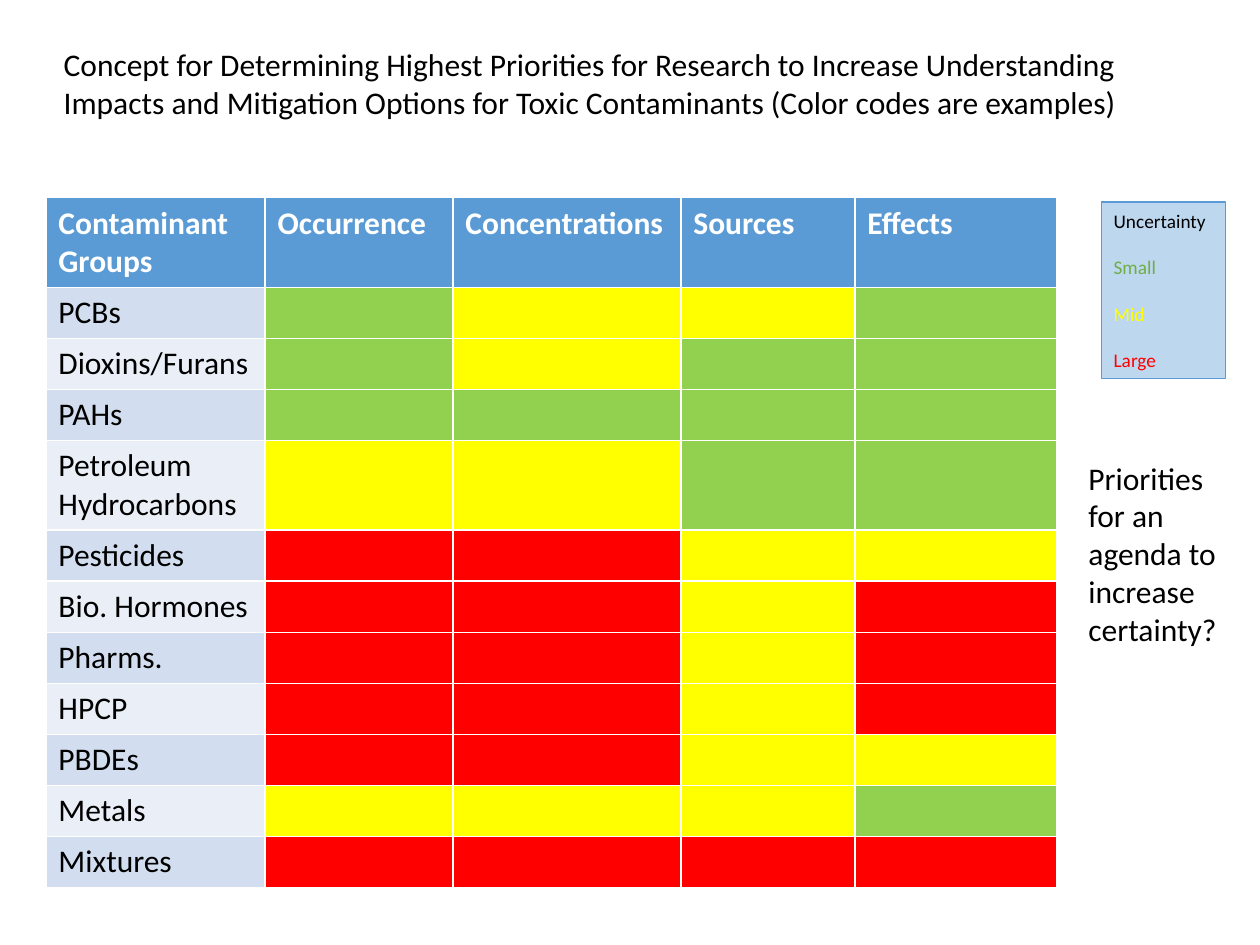
from pptx import Presentation
from pptx.dml.color import RGBColor
from pptx.enum.shapes import MSO_SHAPE
from pptx.enum.text import MSO_ANCHOR, MSO_AUTO_SIZE, PP_ALIGN
from pptx.util import Pt

RECT = MSO_SHAPE.RECTANGLE
FIT = MSO_AUTO_SIZE.SHAPE_TO_FIT_TEXT
LEFT = PP_ALIGN.LEFT
TOP, MIDDLE = MSO_ANCHOR.TOP, MSO_ANCHOR.MIDDLE

FONT = "Calibri"
BLUE = "5B9BD5"
BANDS = ("D2DEEF", "EAEFF7")
LEVELS = {"S": "92D050", "M": "FFFF00", "L": "FF0000"}
HEADERS = ["Contaminant Groups", "Occurrence", "Concentrations", "Sources", "Effects"]
COL_WIDTHS = [125.3, 107.3, 130.3, 99.4, 115.2]
ROW_HEIGHT = 29.2
GROUPS = [
    ("PCBs", "SMMS"),
    ("Dioxins/Furans", "SMSS"),
    ("PAHs", "SSSS"),
    ("Petroleum Hydrocarbons", "MMSS"),
    ("Pesticides", "LLMM"),
    ("Bio. Hormones", "LLML"),
    ("Pharms.", "LLML"),
    ("HPCP", "LLML"),
    ("PBDEs", "LLMM"),
    ("Metals", "MMMS"),
    ("Mixtures", "LLLL"),
]
LEGEND = [
    ("Uncertainty", "000000"),
    ("Small", "70AD47"),
    ("Mid", "FFFF00"),
    ("Large", "FF0000"),
]


def rgb(color):
    return RGBColor.from_string(color)


def paint(obj, color):
    obj.fill.solid()
    obj.fill.fore_color.rgb = rgb(color)


def write(p, text, size=18, color="000000", bold=False, before=0):
    p.alignment = LEFT
    p.space_before = Pt(before)
    r = p.add_run()
    r.text = text
    r.font.name = FONT
    r.font.size = Pt(size)
    r.font.bold = bold
    r.font.color.rgb = rgb(color)


def add_text(s, text, x, y, w, h):
    tf = s.shapes.add_textbox(Pt(x), Pt(y), Pt(w), Pt(h)).text_frame
    tf.word_wrap = True
    tf.auto_size = FIT
    write(tf.paragraphs[0], text)


def add_matrix(s, x, y):
    rows = len(GROUPS) + 1
    table = s.shapes.add_table(rows, len(HEADERS), Pt(x), Pt(y),
                               Pt(sum(COL_WIDTHS)), Pt(rows * ROW_HEIGHT)).table
    for col, width in zip(table.columns, COL_WIDTHS):
        col.width = Pt(width)
    for row in table.rows:
        row.height = Pt(ROW_HEIGHT)
    for cell, header in zip(table.rows[0].cells, HEADERS):
        paint(cell, BLUE)
        cell.vertical_anchor = TOP
        write(cell.text_frame.paragraphs[0], header, color="FFFFFF", bold=True)
    for i, (group, levels) in enumerate(GROUPS):
        name = table.cell(i + 1, 0)
        paint(name, BANDS[i % 2])
        write(name.text_frame.paragraphs[0], group)
        for j, level in enumerate(levels, 1):
            paint(table.cell(i + 1, j), LEVELS[level])


def add_legend(s, x, y, w, h):
    sp = s.shapes.add_shape(RECT, Pt(x), Pt(y), Pt(w), Pt(h))
    sp.shadow.inherit = False
    paint(sp, "BDD7EE")
    sp.line.color.rgb = rgb(BLUE)
    sp.line.width = Pt(0.75)
    tf = sp.text_frame
    tf.word_wrap = True
    tf.auto_size = FIT
    tf.vertical_anchor = MIDDLE
    for i, (label, color) in enumerate(LEGEND):
        p = tf.add_paragraph() if i else tf.paragraphs[0]
        write(p, label, size=11, color=color, before=13.4 if i else 0)


def main():
    prs = Presentation()
    prs.slide_width, prs.slide_height = Pt(720), Pt(540)
    s = prs.slides.add_slide(prs.slide_layouts[6])
    add_matrix(s, 26.2, 113)
    add_text(s, "Concept for Determining Highest Priorities for Research to Increase "
             "Understanding Impacts and Mitigation Options for Toxic Contaminants "
             "(Color codes are examples)", 29.3, 22.3, 620, 50.9)
    add_legend(s, 629.3, 115.5, 71, 100.8)
    add_text(s, "Priorities for an agenda to increase certainty?", 614.9, 258.5, 96.5, 116.6)
    prs.save("out.pptx")


if __name__ == "__main__":
    main()
